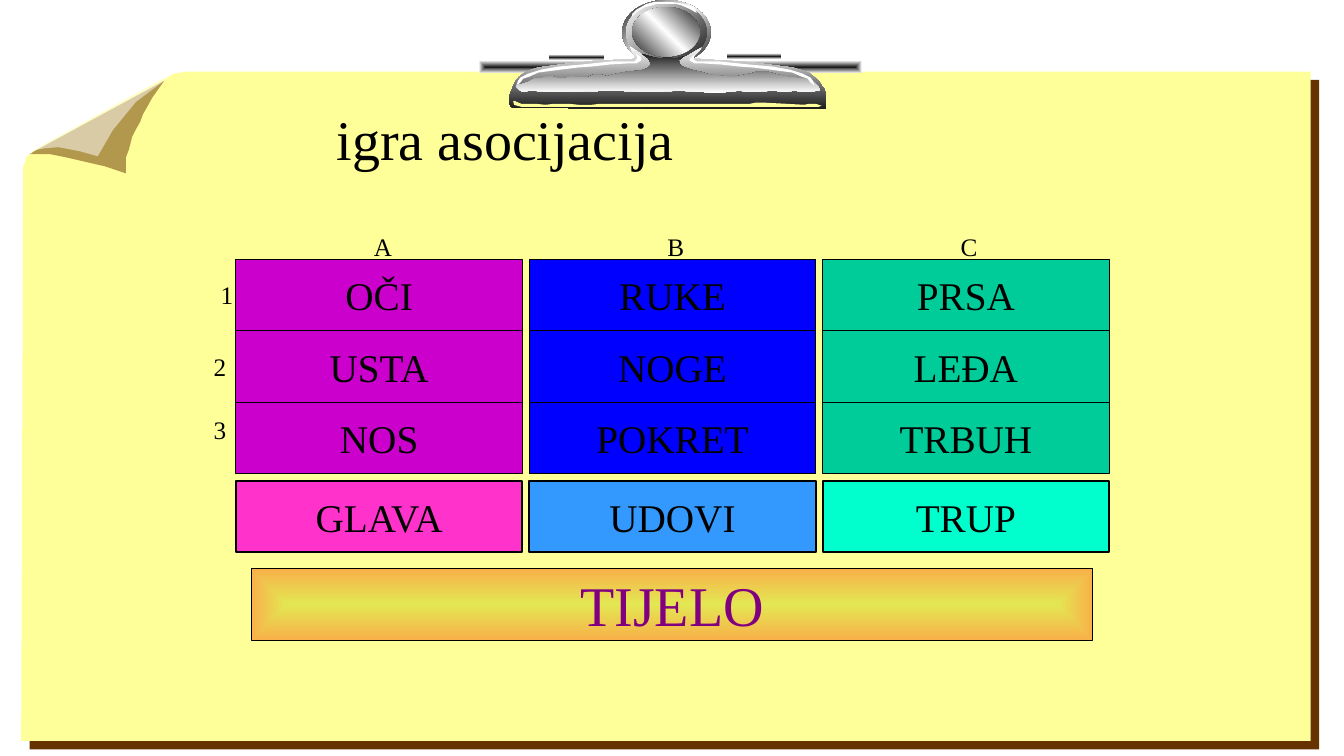
from pptx import Presentation
from pptx.dml.color import RGBColor
from pptx.enum.shapes import MSO_SHAPE
from pptx.enum.text import MSO_ANCHOR, MSO_AUTO_SIZE, PP_ALIGN
from pptx.oxml import parse_xml
from pptx.oxml.ns import nsdecls, qn
from pptx.util import Inches, Pt

FONT = "Times New Roman"
TITLE = "igra asocijacija"
COLUMNS = [
    # letter, clues, clue colour, solution, solution colour
    ("A", ["OČI", "USTA", "NOS"], "CC00CC", "GLAVA", "FF33CC"),
    ("B", ["RUKE", "NOGE", "POKRET"], "0000FF", "UDOVI", "3399FF"),
    ("C", ["PRSA", "LEĐA", "TRBUH"], "00CC99", "TRUP", "00FFCC"),
]
ROW_LABELS = [("1", 2.09, 2.72), ("2", 2.02, 3.44), ("3", 2.02, 4.06)]
FINAL = "TIJELO"

GRID_LEFT, GRID_TOP = 2.34, 2.57
CELL_WIDTH, CELL_HEIGHT, COLUMN_STEP = 2.84, 0.71, 2.91
SOLUTION_TOP, FINAL_TOP = 4.77, 5.64
LETTER_TOP, LABEL_WIDTH, LABEL_HEIGHT = 2.25, 0.37, 0.4

DARK, WHITE, PAPER, BROWN = "1C1C1C", "FFFFFF", "FFFF99", "663300"
# A fill is a hex colour, a (colour, opacity) pair, or a (colours, angle) pair;
# angle None means a gradient running out from the centre.
GLOW = ([DARK, WHITE], None)
WIRE = ([WHITE, DARK, WHITE], 90)
FINAL_FILL = (["E3E753", "F8B049"], None)

# Outlines are in hundredths of an inch
SHEET = [(180, 72), (185, 71), (1300, 71), (1300, 735), (21, 735), (23, 171), (23, 165),
         (25, 161), (26, 156), (29, 153), (33, 150), (36, 148), (159, 80), (167, 76), (173, 73)]
CURL_SHADE = [(65, 156), (104, 165), (116, 169), (125, 172), (125, 156), (128, 148),
              (131, 136), (135, 128), (139, 121), (142, 113), (146, 106), (151, 97),
              (163, 80), (36, 149), (29, 153), (50, 153)]
CURL_LIGHT = [(28, 156), (31, 151), (42, 145), (171, 74), (135, 101), (112, 129), (97, 155),
              (79, 150), (58, 146), (45, 147), (34, 149)]
KNOB_SHINE = [(691, 13), (690, 10), (686, 7), (681, 5), (674, 3), (666, 2), (649, 2), (641, 4),
              (636, 7), (632, 9), (628, 13), (627, 14), (627, 16), (633, 11), (640, 7), (645, 6),
              (651, 4), (670, 4), (675, 5), (682, 8), (686, 10)]
CLIP_BODY = [(507, 106), (512, 107), (819, 108), (819, 95), (818, 89), (815, 85), (812, 80),
             (802, 72), (786, 67), (769, 65), (753, 63), (736, 61), (715, 60), (686, 58),
             (694, 50), (696, 47), (689, 51), (681, 56), (678, 57), (670, 59), (658, 59),
             (647, 59), (641, 56), (632, 51), (625, 46), (627, 51), (630, 57), (627, 59),
             (593, 60), (565, 63), (534, 67), (522, 71), (515, 76), (511, 81), (508, 88),
             (506, 93), (505, 98), (505, 102)]
LEFT_SHINE = [(512, 85), (514, 80), (516, 77), (524, 73), (537, 69), (554, 66), (577, 64),
              (606, 61), (629, 61), (632, 58), (631, 53), (636, 57), (636, 60), (631, 63),
              (621, 63), (605, 64), (587, 66), (573, 67), (557, 69), (534, 72), (525, 76),
              (519, 78), (516, 82)]
RIGHT_SHINE = [(1320 - x, y + (y < 60)) for x, y in LEFT_SHINE]
LOWER_EDGE = [(510, 100), (509, 101), (510, 104), (513, 105), (517, 106), (812, 106), (815, 105),
              (809, 103), (802, 103), (798, 104), (760, 102), (749, 102), (744, 103), (595, 103),
              (587, 104), (574, 104), (564, 103), (550, 103), (541, 104), (531, 103), (517, 103)]
CLIP_BAND = [(534, 78), (529, 78), (525, 81), (516, 84), (513, 84), (512, 86), (515, 89),
             (518, 91), (525, 90), (552, 91), (609, 90), (645, 91), (675, 90), (712, 92),
             (733, 90), (743, 91), (768, 90), (778, 91), (788, 90), (797, 91), (813, 90),
             (812, 86), (809, 83), (806, 80), (800, 78), (796, 78), (780, 76), (771, 74),
             (761, 71), (750, 71), (745, 73), (730, 76), (722, 76), (703, 74), (694, 71),
             (688, 70), (679, 67), (675, 65), (673, 60), (678, 56), (671, 58), (661, 57),
             (654, 58), (645, 56), (636, 53), (643, 58), (645, 62), (645, 65), (642, 68),
             (635, 70), (622, 71), (608, 74), (602, 76), (596, 74), (589, 74), (583, 77),
             (566, 76), (559, 78), (555, 78), (545, 75), (539, 77)]

OVAL, RECTANGLE = MSO_SHAPE.OVAL, MSO_SHAPE.RECTANGLE
# Back to front: (outline, fill) or (preset, fill, left, top, width, height)
CLIPBOARD = [
    (CURL_SHADE, (BROWN, 50)),
    (CURL_LIGHT, (WHITE, 50)),
    (RECTANGLE, GLOW, 4.75, 0.6, 3.8, 0.13),
    (RECTANGLE, WIRE, 5.45, 0.54, 0.54, 0.06),
    (RECTANGLE, WIRE, 7.21, 0.53, 0.54, 0.06),
    (OVAL, ([DARK, WHITE, DARK], 45), 6.17, 0, 0.88, 0.64),
    (OVAL, ([WHITE, DARK], 45), 6.21, 0.02, 0.8, 0.6),
    (KNOB_SHINE, WHITE),
    (OVAL, ([DARK, WHITE, DARK], 315), 6.27, 0.07, 0.67, 0.49),
    (CLIP_BODY, ([WHITE, DARK], 90)),
    (LEFT_SHINE, WHITE),
    (LOWER_EDGE, PAPER),
    (CLIP_BAND, ([DARK, WHITE], 90)),
    (RIGHT_SHINE, WHITE),
]


def rgb(value):
    return RGBColor.from_string(value)


def fill_xml(colours, setting):
    """Translucent fill for one colour, gradient for a list of them."""
    if isinstance(colours, str):
        return (f'<a:solidFill {nsdecls("a")}><a:srgbClr val="{colours}">'
                f'<a:alpha val="{setting * 1000}"/></a:srgbClr></a:solidFill>')
    step = 100000 // (len(colours) - 1)
    stops = "".join(f'<a:gs pos="{i * step}"><a:srgbClr val="{colour}"/></a:gs>'
                    for i, colour in enumerate(colours))
    if setting is None:
        course = ('<a:path path="shape"><a:fillToRect l="50000" t="50000" '
                  'r="50000" b="50000"/></a:path>')
    else:
        course = f'<a:lin ang="{setting * 60000}" scaled="0"/>'
    return f'<a:gradFill {nsdecls("a")}><a:gsLst>{stops}</a:gsLst>{course}</a:gradFill>'


def paint(shape, fill, line_width=None):
    shape.shadow.inherit = False
    shape.fill.solid()
    if isinstance(fill, str):
        shape.fill.fore_color.rgb = rgb(fill)
    else:
        properties = shape._element.spPr
        properties.replace(properties.find(qn("a:solidFill")), parse_xml(fill_xml(*fill)))
    if line_width is None:
        shape.line.fill.background()
    else:
        shape.line.color.rgb = rgb("000000")
        shape.line.width = Pt(line_width)


def add_outline(page, points, fill):
    builder = page.shapes.build_freeform(*points[0], scale=Inches(0.01))
    builder.add_line_segments(points[1:], close=True)
    shape = builder.convert_to_shape()
    paint(shape, fill)
    return shape


def add_preset(page, preset, fill, left, top, width, height, line_width=None):
    shape = page.shapes.add_shape(preset, *map(Inches, (left, top, width, height)))
    paint(shape, fill, line_width)
    return shape


def write(shape, text, size, colour="000000", align=PP_ALIGN.CENTER, wrap=False):
    frame = shape.text_frame
    frame.word_wrap = wrap
    frame.vertical_anchor = MSO_ANCHOR.MIDDLE
    para = frame.paragraphs[0]
    para.alignment = align
    span = para.add_run()
    span.text = text
    span.font.name, span.font.size = FONT, Pt(size)
    span.font.color.rgb = rgb(colour)


def add_cell(page, text, fill, left, top, line_width=0.75):
    cell = add_preset(page, MSO_SHAPE.FLOWCHART_PROCESS, fill, left, top,
                      CELL_WIDTH, CELL_HEIGHT, line_width)
    write(cell, text, 28)


def add_label(page, text, left, top, width):
    box = page.shapes.add_textbox(*map(Inches, (left, top, width, LABEL_HEIGHT)))
    write(box, text, 18, align=PP_ALIGN.LEFT)
    box.text_frame.vertical_anchor = MSO_ANCHOR.TOP
    box.text_frame.auto_size = MSO_AUTO_SIZE.SHAPE_TO_FIT_TEXT


def main():
    deck = Presentation()
    deck.slide_width, deck.slide_height = Inches(13.33), Inches(7.5)
    page = deck.slides.add_slide(deck.slide_layouts[6])

    sheet = add_outline(page, SHEET, PAPER)
    sheet._element.spPr.find(qn("a:effectLst")).append(parse_xml(
        f'<a:outerShdw {nsdecls("a")} dist="{Pt(8.5)}" dir="2700000" algn="ctr" '
        f'rotWithShape="0"><a:srgbClr val="{BROWN}"/></a:outerShdw>'))
    for part, fill, *place in CLIPBOARD:
        if place:
            add_preset(page, part, fill, *place)
        else:
            add_outline(page, part, fill)

    title = page.shapes.add_textbox(*map(Inches, (2.81, 1.02, 4.4, 0.69)))
    write(title, TITLE, 40, wrap=True)

    for column, (letter, clues, colour, solution, solution_colour) in enumerate(COLUMNS):
        left = GRID_LEFT + column * COLUMN_STEP
        for row, clue in enumerate(clues):
            add_cell(page, clue, colour, left, GRID_TOP + row * CELL_HEIGHT)
        add_cell(page, solution, solution_colour, left, SOLUTION_TOP, 1.5)
        add_label(page, letter, left + CELL_WIDTH / 2 - 0.15, LETTER_TOP, LABEL_WIDTH)
    for number, left, top in ROW_LABELS:
        add_label(page, number, left, top, 0.33)

    final = add_preset(page, MSO_SHAPE.FLOWCHART_PROCESS, FINAL_FILL,
                       2.49, FINAL_TOP, 8.35, CELL_HEIGHT, 0.75)
    write(final, FINAL, 40, "800080")
    deck.save("out.pptx")


if __name__ == "__main__":
    main()
